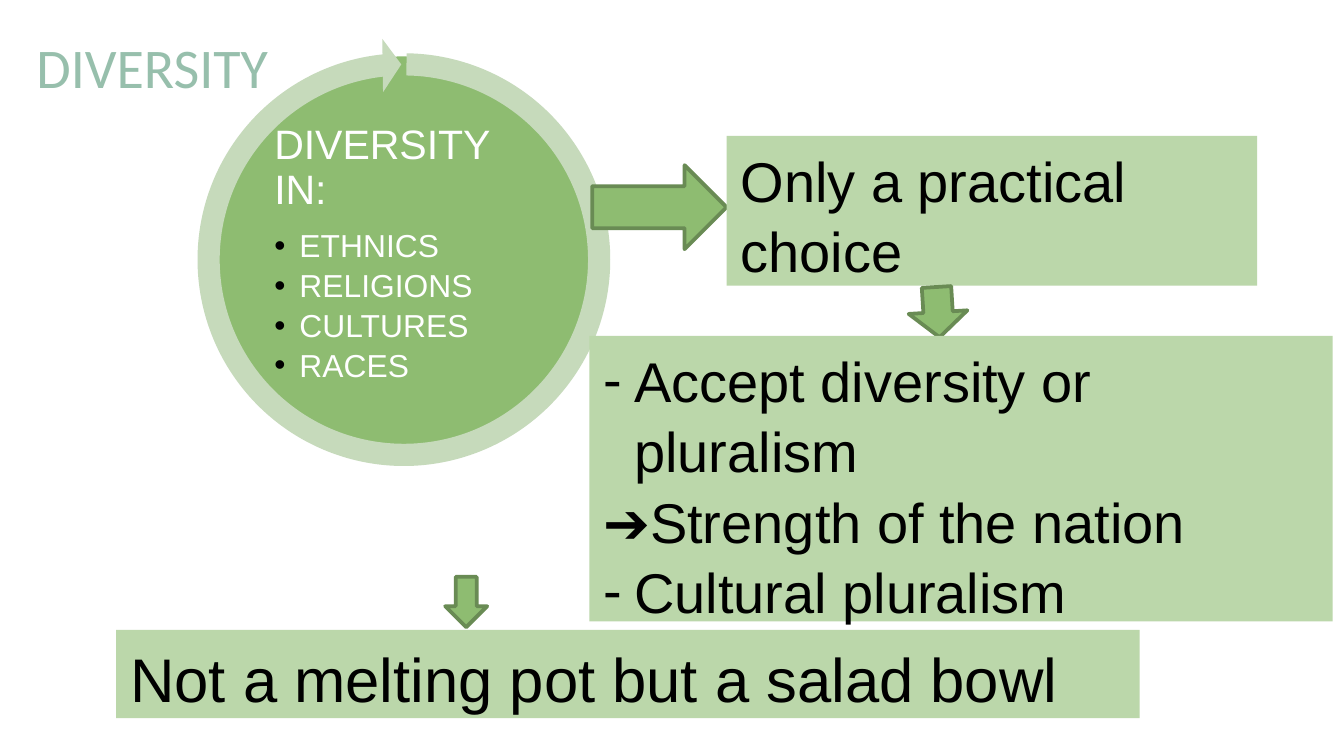
from dataclasses import dataclass

from lxml.etree import SubElement
from pptx import Presentation
from pptx.dml.color import RGBColor
from pptx.enum.shapes import MSO_SHAPE as Preset
from pptx.enum.text import MSO_ANCHOR as Anchor, PP_ALIGN as Align
from pptx.oxml.ns import qn
from pptx.util import Emu, Pt

EMU_PER_PX = 9525
COLORS = {
    "green": "8EBC71",
    "ring": "C6DABB",
    "panel": "BBD7AA",
    "outline": "698B54",
    "title": "97BFAC",
    "white": "FFFFFF",
    "black": "000000",
}


@dataclass(frozen=True)
class Box:
    left: int
    top: int
    width: int
    height: int


@dataclass(frozen=True)
class Line:
    text: str
    size: int
    bullet: str = ""
    indent: int = 0
    after: int = 0


@dataclass(frozen=True)
class Arrow:
    preset: Preset
    box: Box
    rotation: float = 0


@dataclass(frozen=True)
class Panel:
    box: Box
    lines: tuple[Line, ...]


def px(length: int) -> Emu:
    return Emu(length * EMU_PER_PX)


def color(name: str) -> RGBColor:
    return RGBColor.from_string(COLORS[name])


def place(box: Box) -> tuple[Emu, ...]:
    return px(box.left), px(box.top), px(box.width), px(box.height)


def add_preset(slide, preset: Preset, box: Box, fill: str, outline: str = ""):
    shape = slide.shapes.add_shape(preset, *place(box))
    shape.shadow.inherit = False
    shape.fill.solid()
    shape.fill.fore_color.rgb = color(fill)
    if outline:
        shape.line.color.rgb = color(outline)
        shape.line.width = Pt(2)
    else:
        shape.line.fill.background()
    return shape


def set_bullet(paragraph, bullet: str, indent: int) -> None:
    properties = paragraph._p.get_or_add_pPr()
    properties.set("marL", str(px(indent)))
    properties.set("indent", str(-px(indent)))
    bullet_color = SubElement(properties, qn("a:buClr"))
    SubElement(bullet_color, qn("a:srgbClr"), val=COLORS["black"])
    SubElement(properties, qn("a:buFont"), typeface="Arial")
    SubElement(properties, qn("a:buChar"), char=bullet)


def write_text(shape, lines: tuple[Line, ...], *, font: str = "Arial",
               font_color: str = "black", spacing: float = 1.0,
               anchor: Anchor = Anchor.TOP, inset_x: int = 10,
               inset_y: int = 5) -> None:
    frame = shape.text_frame
    frame.word_wrap = True
    frame.vertical_anchor = anchor
    frame.margin_left = frame.margin_right = px(inset_x)
    frame.margin_top = frame.margin_bottom = px(inset_y)
    for index, line in enumerate(lines):
        paragraph = frame.add_paragraph() if index else frame.paragraphs[0]
        paragraph.alignment = Align.LEFT
        paragraph.line_spacing = spacing
        paragraph.space_after = Pt(line.after)
        if line.bullet:
            set_bullet(paragraph, line.bullet, line.indent)
        run = paragraph.add_run()
        run.text = line.text
        run.font.name = font
        run.font.size = Pt(line.size)
        run.font.color.rgb = color(font_color)


def add_arrow(slide, arrow: Arrow) -> None:
    shape = add_preset(slide, arrow.preset, arrow.box, "green", "outline")
    shape.rotation = arrow.rotation


def add_panel(slide, panel: Panel) -> None:
    shape = add_preset(slide, Preset.RECTANGLE, panel.box, "panel")
    write_text(shape, panel.lines, spacing=1.05)


KINDS = ("ETHNICS", "RELIGIONS", "CULTURES", "RACES")
DISC_LINES = (
    Line("DIVERSITY IN:", 22, after=9),
    *(Line(kind, 17, bullet="•", indent=18, after=3) for kind in KINDS),
)
RING_ADJUSTMENTS = (0.05, 3.28, 158.26, 162.46, 0.06)

PANELS = (
    Panel(Box(519, 97, 379, 107), (Line("Only a practical choice", 30),)),
    Panel(Box(421, 240, 531, 204), (
        Line("Accept diversity or pluralism", 30, bullet="-", indent=22),
        Line("➔Strength of the nation", 30),
        Line("Cultural pluralism", 30, bullet="-", indent=22),
    )),
    Panel(Box(83, 450, 731, 63),
          (Line("Not a melting pot but a salad bowl", 33),)),
)
ARROWS = (
    Arrow(Preset.RIGHT_ARROW, Box(423, 118, 96, 60)),
    Arrow(Preset.RIGHT_ARROW, Box(652, 202, 36, 42), rotation=86.5),
    Arrow(Preset.DOWN_ARROW, Box(318, 412, 30, 36)),
)


def main() -> None:
    presentation = Presentation()
    presentation.slide_width, presentation.slide_height = px(960), px(540)
    slide = presentation.slides.add_slide(presentation.slide_layouts[6])

    # Disc with its list, circled by an arrow
    add_preset(slide, Preset.OVAL, Box(146, 39, 282, 282), "green", "white")
    disc_text = slide.shapes.add_textbox(*place(Box(193, 86, 188, 188)))
    write_text(disc_text, DISC_LINES, font_color="white", spacing=0.9,
               inset_x=3, inset_y=3)
    ring = add_preset(slide, Preset.CIRCULAR_ARROW, Box(130, 27, 317, 317), "ring")
    for index, value in enumerate(RING_ADJUSTMENTS):
        ring.adjustments[index] = value

    # Title
    title = slide.shapes.add_textbox(*place(Box(16, -9, 800, 90)))
    write_text(title, (Line("DIVERSITY", 30),), font="Calibri",
               font_color="title", anchor=Anchor.BOTTOM, inset_y=10)

    # Each arrow leads to the panel drawn after it
    for arrow, panel in zip(ARROWS, PANELS):
        add_arrow(slide, arrow)
        add_panel(slide, panel)

    presentation.save("out.pptx")


if __name__ == "__main__":
    main()
